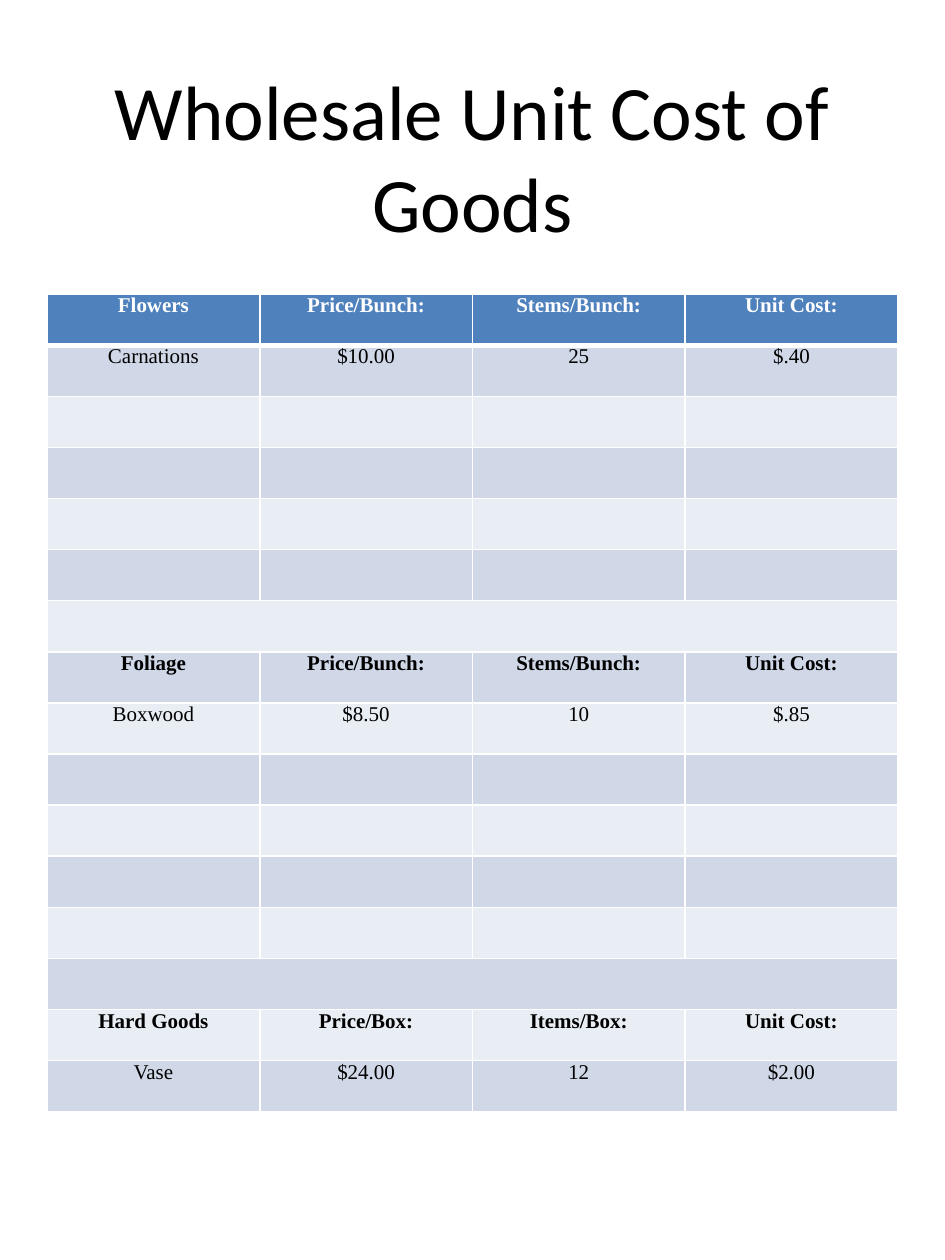
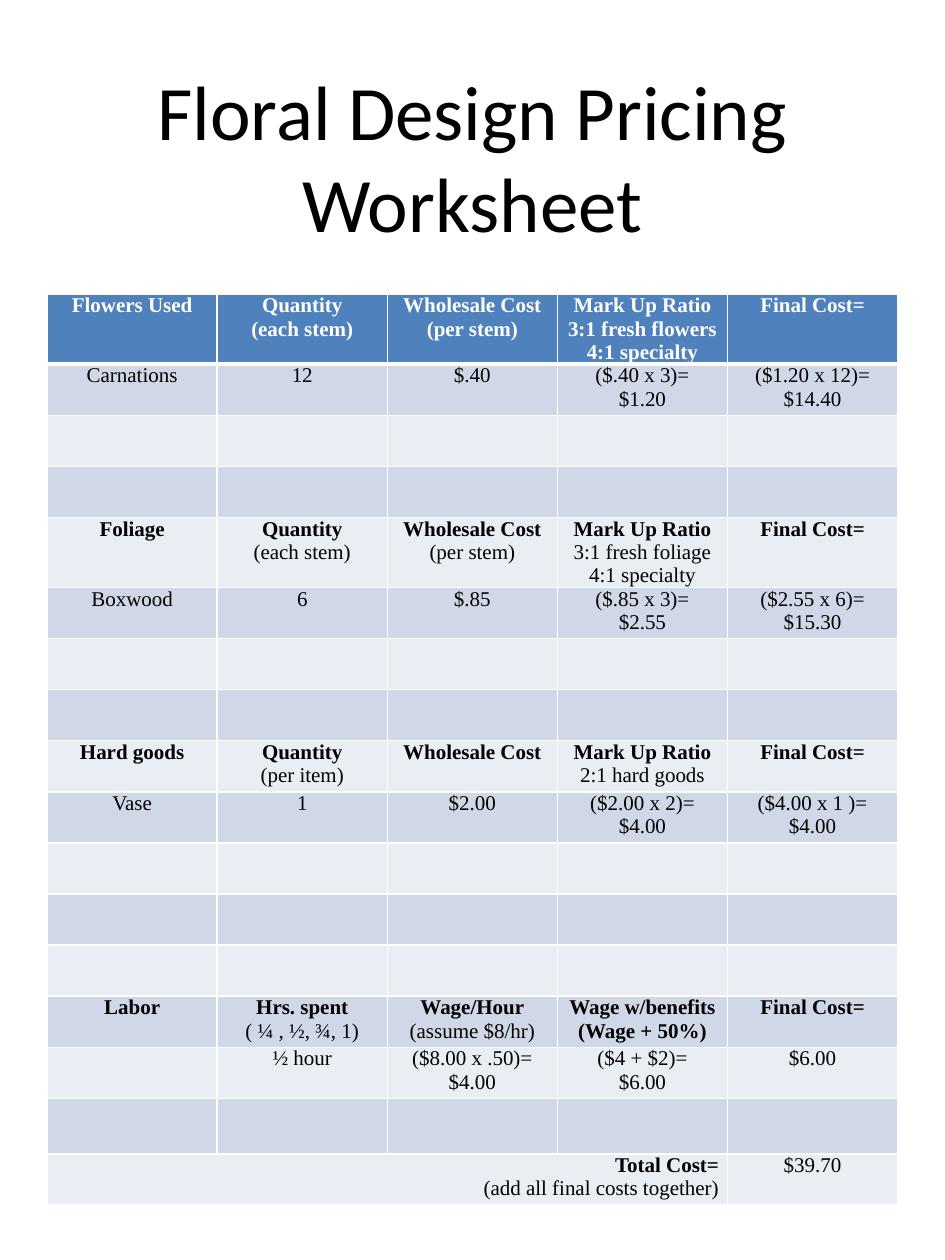
from lxml import etree
from pptx import Presentation
from pptx.dml.color import RGBColor
from pptx.enum.text import MSO_ANCHOR, PP_ALIGN
from pptx.oxml.ns import qn
from pptx.util import Cm, Pt

CENTER, RIGHT = PP_ALIGN.CENTER, PP_ALIGN.RIGHT
MIDDLE = MSO_ANCHOR.MIDDLE
TITLE_ONLY = 5

WHITE, BLACK = "FFFFFF", "000000"
HEADER_BLUE = "4F81BD"
BANDS = ("E9EDF4", "D0D8E8")
TITLE_FONT, TABLE_FONT = "Calibri", "Times New Roman"

LEFT, WIDTH = 0.95, 17.15
TITLE_TOP, TITLE_HEIGHT = 1.02, 4.23
TABLE_TOP, ROW_HEIGHT = 5.93, 1.03
CELL_MARGIN = 0.17
THIN, THICK = 1, 3

# A leading * makes a line bold. When a row has too few cells,
# its first cell spans the missing columns.
BLANK = ()
SPACER = ("",)

UNIT_COSTS = [
    ("Flowers", "Price/Bunch:", "Stems/Bunch:", "Unit Cost:"),
    ("Carnations", "$10.00", "25", "$.40"),
    *[BLANK] * 4,
    SPACER,
    ("*Foliage", "*Price/Bunch:", "*Stems/Bunch:", "*Unit Cost:"),
    ("Boxwood", "$8.50", "10", "$.85"),
    *[BLANK] * 4,
    SPACER,
    ("*Hard Goods", "*Price/Box:", "*Items/Box:", "*Unit Cost:"),
    ("Vase", "$24.00", "12", "$2.00"),
]

PRICING = [
    ("Flowers Used", "Quantity\n(each stem)", "Wholesale Cost\n(per stem)",
     "Mark Up Ratio\n3:1 fresh flowers\n4:1 specialty", "Final Cost="),
    ("Carnations", "12", "$.40", "($.40 x 3)=\n$1.20", "($1.20 x 12)=\n$14.40"),
    *[BLANK] * 2,
    ("*Foliage", "*Quantity\n(each stem)", "*Wholesale Cost\n(per stem)",
     "*Mark Up Ratio\n3:1 fresh foliage\n4:1 specialty", "*Final Cost="),
    ("Boxwood", "6", "$.85", "($.85 x 3)=\n$2.55", "($2.55 x 6)=\n$15.30"),
    *[BLANK] * 2,
    ("*Hard goods", "*Quantity\n(per item)", "*Wholesale Cost",
     "*Mark Up Ratio\n2:1 hard goods", "*Final Cost="),
    ("Vase", "1", "$2.00", "($2.00 x 2)=\n$4.00", "($4.00 x 1 )=\n$4.00"),
    *[BLANK] * 3,
    ("*Labor", "*Hrs. spent\n( ¼ , ½, ¾, 1)", "*Wage/Hour\n(assume $8/hr)",
     "*Wage w/benefits\n*(Wage + 50%)", "*Final Cost="),
    ("", "½ hour", "($8.00 x .50)=\n$4.00", "($4 + $2)=\n$6.00", "$6.00"),
    BLANK,
    ("*Total Cost=\n(add all final costs together)", "$39.70"),
]


def color(value):
    return RGBColor.from_string(value)


def add_run(paragraph, text, font, size, text_color, bold=False):
    run = paragraph.add_run()
    run.text = text
    run.font.name = font
    run.font.size = Pt(size)
    run.font.bold = bold
    run.font.color.rgb = color(text_color)


def add_title(slide, text):
    title = slide.shapes.title
    title.left, title.top = Cm(LEFT), Cm(TITLE_TOP)
    title.width, title.height = Cm(WIDTH), Cm(TITLE_HEIGHT)
    title.text_frame.vertical_anchor = MIDDLE
    paragraph = title.text_frame.paragraphs[0]
    paragraph.alignment = CENTER
    add_run(paragraph, text, TITLE_FONT, 44, BLACK)


def set_borders(cell, row):
    """Draw white borders, with a thick line below the header row."""
    widths = {
        "a:lnL": THIN,
        "a:lnR": THIN,
        "a:lnT": THICK if row == 1 else THIN,
        "a:lnB": THICK if row == 0 else THIN,
    }
    properties = cell._tc.get_or_add_tcPr()
    for position, (tag, width) in enumerate(widths.items()):
        line = etree.Element(qn(tag), w=str(Pt(width)))
        fill = etree.SubElement(line, qn("a:solidFill"))
        etree.SubElement(fill, qn("a:srgbClr"), val=WHITE)
        properties.insert(position, line)


def format_cell(cell, row):
    cell.margin_left = cell.margin_right = Cm(CELL_MARGIN)
    cell.margin_top = cell.margin_bottom = 0
    cell.fill.solid()
    cell.fill.fore_color.rgb = color(BANDS[row % 2] if row else HEADER_BLUE)
    set_borders(cell, row)


def write_cell(cell, text, is_header, alignment):
    frame = cell.text_frame
    for index, line in enumerate(text.split("\n")):
        paragraph = frame.add_paragraph() if index else frame.paragraphs[0]
        paragraph.alignment = alignment
        bold = is_header or line.startswith("*")
        add_run(paragraph, line.removeprefix("*"), TABLE_FONT, 12,
                WHITE if is_header else BLACK, bold)


def add_cost_table(slide, rows):
    column_count = len(rows[0])
    frame = slide.shapes.add_table(
        len(rows), column_count, Cm(LEFT), Cm(TABLE_TOP),
        Cm(WIDTH), Cm(ROW_HEIGHT * len(rows)))
    table = frame.table
    for row, texts in enumerate(rows):
        table.rows[row].height = Cm(ROW_HEIGHT)
        for cell in table.rows[row].cells:
            format_cell(cell, row)
        missing = column_count - len(texts) if texts else 0
        if missing:
            table.cell(row, 0).merge(table.cell(row, missing))
        for index, text in enumerate(texts):
            if text:
                spans = missing and index == 0
                column = index + missing if index else 0
                write_cell(table.cell(row, column), text, row == 0,
                           RIGHT if spans else CENTER)
    return table


def add_worksheet(presentation, title, rows):
    slide = presentation.slides.add_slide(presentation.slide_layouts[TITLE_ONLY])
    add_title(slide, title)
    return add_cost_table(slide, rows)


def main():
    presentation = Presentation()
    presentation.slide_width, presentation.slide_height = Cm(19.05), Cm(25.4)
    add_worksheet(presentation, "Wholesale Unit Cost of Goods", UNIT_COSTS)
    pricing_table = add_worksheet(
        presentation, "Floral Design Pricing Worksheet", PRICING)
    pricing_table.rows[len(PRICING) - 2].height = Cm(1.12)
    presentation.save("out.pptx")


if __name__ == "__main__":
    main()
